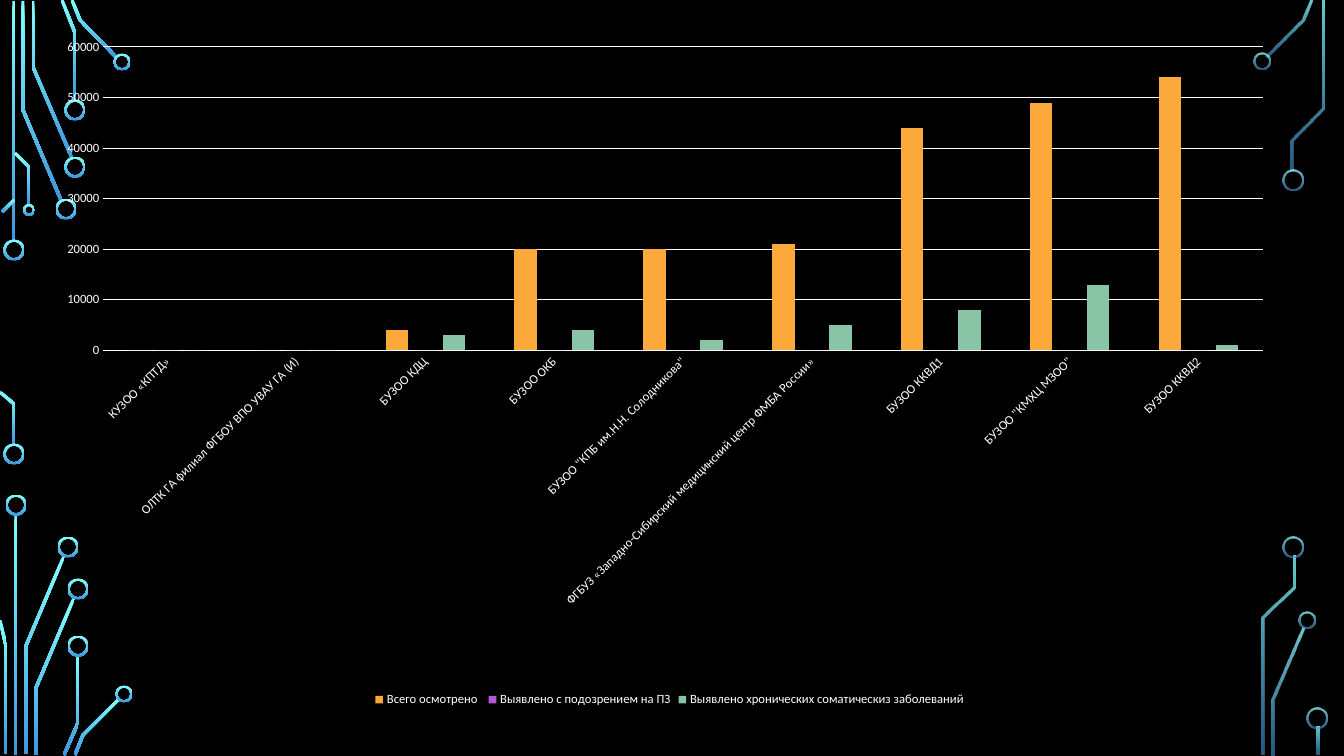
from math import hypot
from lxml.etree import SubElement
from pptx import Presentation
from pptx.chart.data import CategoryChartData
from pptx.dml.color import RGBColor
from pptx.enum.chart import XL_CHART_TYPE, XL_LEGEND_POSITION, XL_TICK_MARK
from pptx.enum.shapes import MSO_SHAPE
from pptx.oxml import parse_xml
from pptx.oxml.ns import nsdecls, qn
from pptx.util import Emu, Pt

COLORS = {
    "background": "000000", "text": "FFFFFF",
    "trace_top": "82FFFF", "trace_bottom": "3D97DE",
    "examined": "FAA93A", "suspected": "B258D3", "chronic": "8AC4A7",
}
FONT = "Calibri"

CLINICS = [
    "КУЗОО «КПТД»",
    "ОЛТК ГА филиал ФГБОУ ВПО УВАУ ГА (И)",
    "БУЗОО КДЦ",
    "БУЗОО ОКБ",
    'БУЗОО "КПБ им.Н.Н. Солодникова"',
    "ФГБУЗ «Западно-Сибирский медицинский центр ФМБА России»",
    "БУЗОО ККВД1",
    'БУЗОО "КМХЦ МЗОО"',
    "БУЗОО ККВД2",
]
SERIES = [
    ("Всего осмотрено ", "examined",
     [0, 0, 4000, 20000, 20000, 21000, 44000, 49000, 54000]),
    ("Выявлено с подозрением на ПЗ", "suspected",
     [0, 0, 0, 0, 0, 0, 0, 0, 0]),
    ("Выявлено хронических соматическиз заболеваний", "chronic",
     [0, 0, 3000, 4000, 2000, 5000, 8000, 13000, 1000]),
]
CHART_BOX = (50, 32, 1239, 679)
PLOT_LAYOUT = {"x": 0.043, "y": 0.022, "w": 0.936, "h": 0.447}

# Circuit decoration: centre lines of the traces, and rings as (x, y, diameter)
LEFT_TRACES = [
    [(14, 1), (14, 242)],
    [(23, 1), (23, 110), (61, 200)],
    [(33, 1), (33, 67), (72, 158)],
    [(62, 0), (75, 33), (75, 101)],
    [(72, 0), (80, 20), (116, 57)],
    [(2, 212), (14, 200)],
    [(0, 392), (14, 404), (14, 445)],
    [(15, 153), (29, 167), (29, 205)],
    [(16, 514), (16, 755)],
    [(64, 556), (26, 646), (26, 754)],
    [(0, 620), (6, 646), (6, 754)],
    [(74, 598), (36, 688), (36, 755)],
    [(64, 755), (78, 723), (78, 655)],
    [(75, 755), (83, 735), (119, 699)],
]
LEFT_RINGS = [
    (14, 250, 21), (14, 454, 21), (66, 209, 21), (75, 167, 21),
    (75, 110, 21), (122, 62, 17), (29, 210, 12), (16, 505, 21),
    (68, 547, 21), (78, 589, 21), (78, 646, 21), (124, 694, 17),
]
RIGHT_TRACES = [
    [(1267, 56), (1303, 20), (1311, 0)],
    [(1292, 170), (1292, 140), (1323, 108), (1323, 1)],
    [(1273, 755), (1273, 699), (1303, 628)],
    [(1263, 755), (1263, 618), (1294, 588), (1294, 556)],
    [(1318, 727), (1318, 755)],
]
RIGHT_RINGS = [
    (1262, 61, 17), (1293, 180, 21), (1293, 547, 21),
    (1307, 620, 17), (1317, 718, 21),
]
TRACE_WIDTH = 3
RING_WIDTH = 2


def px(value):
    return Emu(round(value * 914400 / 100.8))


def color(name):
    return RGBColor.from_string(COLORS[name])


def paint(shape, opacities):
    """Vertical gradient, with an opacity in percent for each end."""
    shape.shadow.inherit = False
    shape.line.fill.background()
    shape.fill.gradient()
    shape.fill.gradient_angle = 270
    for stop, name in zip(shape.fill.gradient_stops, ("trace_top", "trace_bottom")):
        stop.color.rgb = color(name)
    for element, opacity in zip(shape.element.spPr.iter(qn("a:srgbClr")), opacities):
        if opacity < 100:
            SubElement(element, qn("a:alpha")).set("val", str(opacity * 1000))


def trace_outline(points):
    """Both edges of a polyline of TRACE_WIDTH, with mitred corners."""
    normals = []
    for (x1, y1), (x2, y2) in zip(points, points[1:]):
        length = hypot(x2 - x1, y2 - y1)
        normals.append(((y1 - y2) / length, (x2 - x1) / length))
    near, far = [], []
    pairs = zip(normals[:1] + normals, normals + normals[-1:])
    for (x, y), ((ax, ay), (bx, by)) in zip(points, pairs):
        reach = TRACE_WIDTH / 2 / (1 + ax * bx + ay * by)
        dx, dy = (ax + bx) * reach, (ay + by) * reach
        near.append((px(x + dx), px(y + dy)))
        far.append((px(x - dx), px(y - dy)))
    return near + far[::-1]


def add_trace(page, points, opacities):
    (x1, y1), (x2, y2) = points[0], points[-1]
    if len(points) == 2 and x1 == x2:
        trace = page.shapes.add_shape(
            MSO_SHAPE.RECTANGLE, px(x1 - TRACE_WIDTH / 2), px(y1),
            px(TRACE_WIDTH), px(y2 - y1))
    else:
        outline = trace_outline(points)
        builder = page.shapes.build_freeform(*outline[0])
        builder.add_line_segments(outline[1:], close=True)
        trace = builder.convert_to_shape()
    paint(trace, opacities)


def add_ring(page, x, y, diameter, opacities):
    ring = page.shapes.add_shape(
        MSO_SHAPE.DONUT, px(x - diameter / 2), px(y - diameter / 2),
        px(diameter), px(diameter))
    ring.adjustments[0] = RING_WIDTH / diameter
    paint(ring, opacities)


def style_font(font, size):
    font.name = FONT
    font.size = Pt(size)
    font.color.rgb = color("text")


def style_line(line):
    line.color.rgb = color("text")
    line.width = Pt(0.75)


def add_clinic_chart(page):
    data = CategoryChartData()
    data.categories = CLINICS
    for name, _, values in SERIES:
        data.add_series(name, values)
    chart = page.shapes.add_chart(
        XL_CHART_TYPE.COLUMN_CLUSTERED, *map(px, CHART_BOX), data).chart
    style_font(chart.font, 10)
    chart.has_title = False
    chart.has_legend = True
    chart.legend.position = XL_LEGEND_POSITION.BOTTOM
    chart.legend.include_in_layout = False
    style_font(chart.legend.font, 9)

    plot = chart.plots[0]
    plot.vary_by_categories = False
    plot.gap_width = 219
    plot.overlap = -27
    for series, (_, name, _) in zip(plot.series, SERIES):
        series.format.fill.solid()
        series.format.fill.fore_color.rgb = color(name)

    for axis in (chart.category_axis, chart.value_axis):
        axis.major_tick_mark = axis.minor_tick_mark = XL_TICK_MARK.NONE
        style_font(axis.tick_labels.font, 9)
    style_line(chart.category_axis.format.line)
    chart.value_axis.format.line.fill.background()
    style_line(chart.value_axis.major_gridlines.format.line)
    chart.value_axis.minimum_scale = 0
    chart.value_axis.maximum_scale = 60000
    chart.value_axis.major_unit = 10000

    chart.element.xpath(".//c:catAx/c:txPr/a:bodyPr")[0].set("rot", "-2700000")
    plot_area = chart.element.xpath(".//c:plotArea")[0]
    for layout in plot_area.findall(qn("c:layout")):
        plot_area.remove(layout)
    sizes = "".join(f'<c:{key} val="{value}"/>' for key, value in PLOT_LAYOUT.items())
    plot_area.insert(0, parse_xml(
        f'<c:layout {nsdecls("c")}><c:manualLayout><c:layoutTarget val="inner"/>'
        f'<c:xMode val="edge"/><c:yMode val="edge"/>{sizes}'
        "</c:manualLayout></c:layout>"))


def main():
    deck = Presentation()
    deck.slide_width, deck.slide_height = px(1344), px(756)
    page = deck.slides.add_slide(deck.slide_layouts[6])
    page.background.fill.solid()
    page.background.fill.fore_color.rgb = color("background")
    for traces, rings, opacities in (
            (LEFT_TRACES, LEFT_RINGS, (100, 100)),
            (RIGHT_TRACES, RIGHT_RINGS, (80, 60))):
        for points in traces:
            add_trace(page, points, opacities)
        for ring in rings:
            add_ring(page, *ring, opacities)
    add_clinic_chart(page)
    deck.save("out.pptx")


if __name__ == "__main__":
    main()
